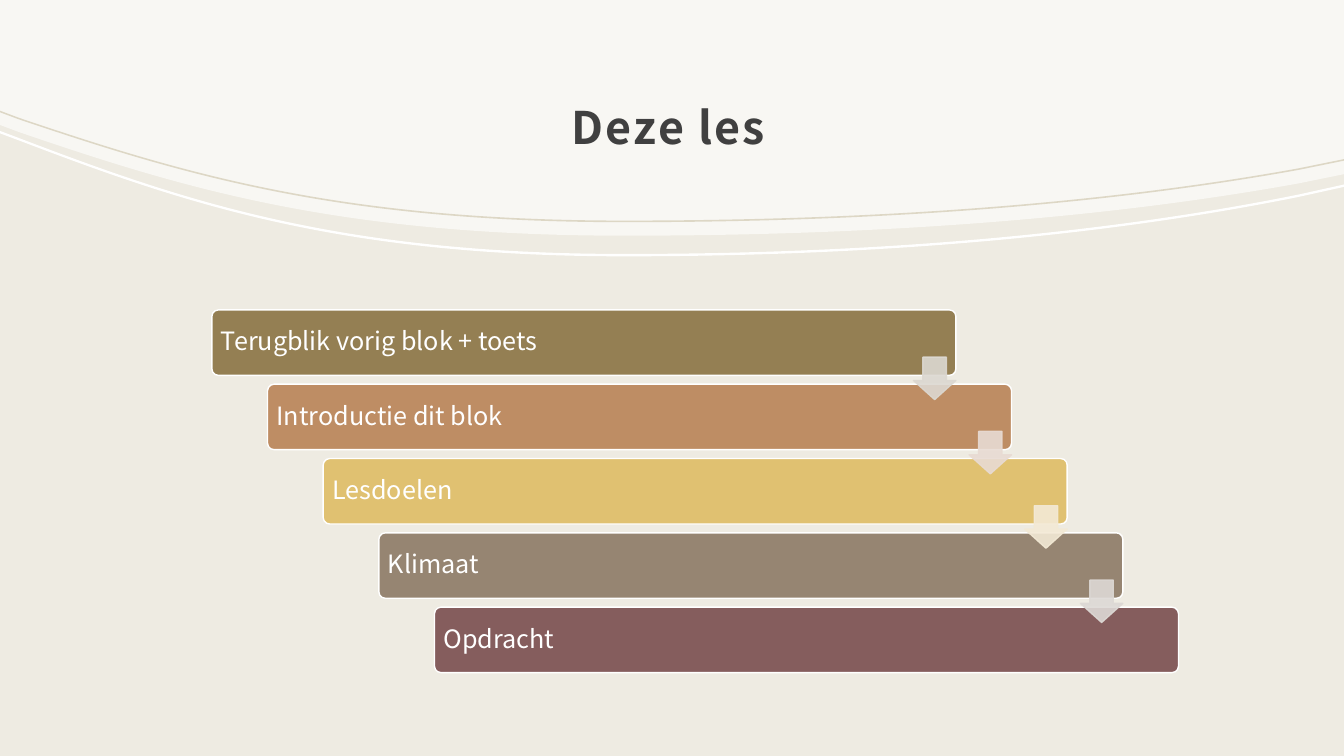
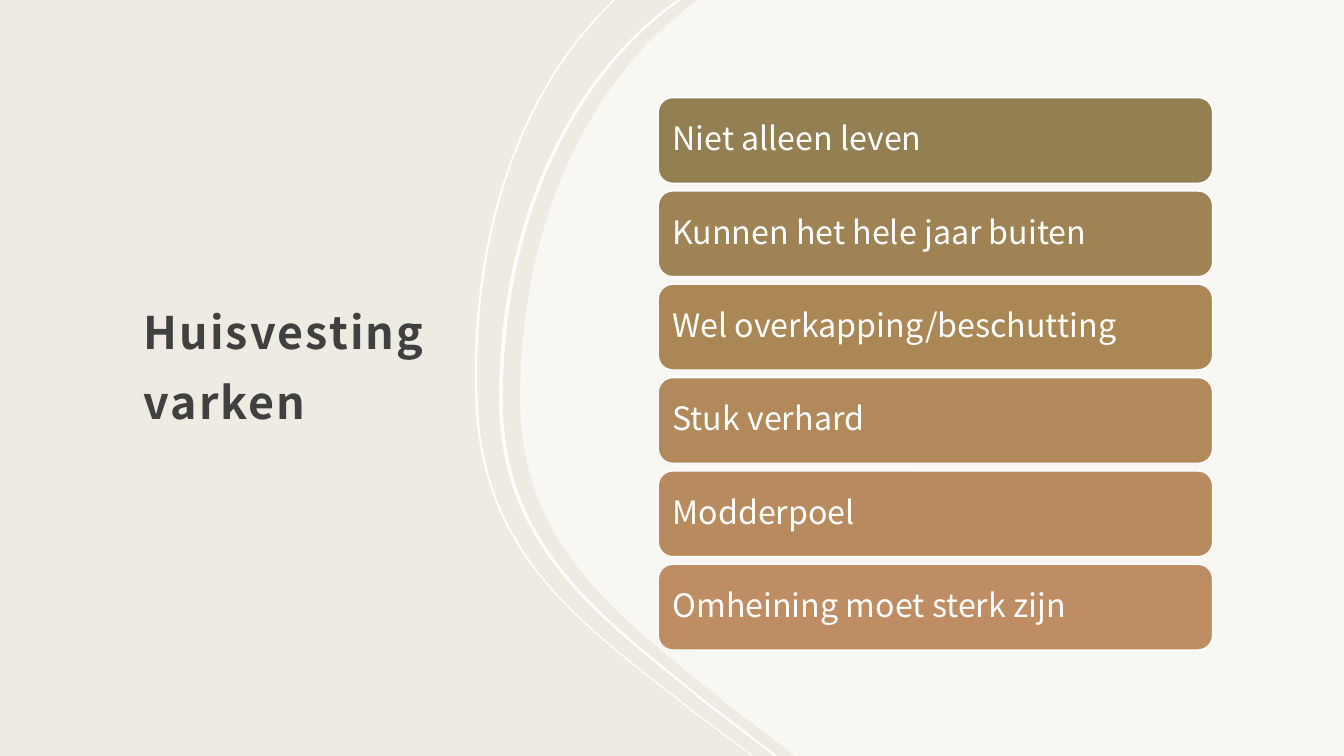
from collections import namedtuple

from lxml import etree
from pptx import Presentation
from pptx.dml.color import RGBColor
from pptx.enum.shapes import MSO_SHAPE as Shape
from pptx.enum.text import MSO_ANCHOR as Anchor, PP_ALIGN as Align
from pptx.oxml.ns import qn
from pptx.util import Cm, Pt

Box = namedtuple("Box", "left top width height")

FONT = "Noto Sans CJK JP"
SLIDE = Box(0, 0, 33.87, 19.05)
COLOURS = {
    "background": "EEEBE2", "white": "FFFFFF", "title": "404040", "hairline": "DDD7C5",
    "olive": "947F53", "copper": "BE8D64", "gold": "E0C171",
    "taupe": "968572", "plum": "855D5D",
    "bronze": "9F8354", "ochre": "AA8755", "tan": "B1895A", "caramel": "B88B5F",
    "arrow_olive": "DCD8D1", "arrow_copper": "E8DBD3",
    "arrow_gold": "F3E9D5", "arrow_taupe": "DDD9D5",
}

# Edges: an end point, a start, two cubic curves of three points each, an end point
WAVE_X = (0, 0.48, 4.55, 8.46, 15.75, 22.23, 27.94, 32.74, 33.87)
WAVE_AREA = (3.15, 3.33, 4.72, 5.94, 5.94, 5.94, 5.49, 4.62, 4.39)
WAVE_WHITE = (3.3, 3.48, 5.03, 6.4, 6.4, 6.4, 5.87, 4.9, 4.65)
WAVE_HAIRLINE = (2.79, 2.97, 4.34, 5.56, 5.56, 5.56, 5.11, 4.24, 4.01)
SIDE_AREA = ((17.6, 0), (17.55, 0.03), (14.71, 2.08), (13.11, 5.82), (13.11, 10.06),
             (13.11, 13.82), (15.67, 15.57), (18.31, 17.73), (20.04, 19.05))
SIDE_THIN = ((15.44, 0), (15.37, 0.08), (13, 2.39), (11.81, 6.1), (11.99, 10.21),
             (12.17, 14.1), (14.78, 15.82), (17.45, 17.93), (18.95, 19.05))
SIDE_GAP = 0.53


def rgb(name):
    return RGBColor.from_string(COLOURS[name])


def paint(shape, fill, line=None, opacity=100):
    """Set fill and line, and the opacity of both."""
    shape.shadow.inherit = False
    shape.fill.solid()
    shape.fill.fore_color.rgb = rgb(fill)
    if line:
        shape.line.color.rgb = rgb(line)
        shape.line.width = Pt(1)
    else:
        shape.line.fill.background()
    if opacity < 100:
        for colour in shape._element.spPr.iter(qn("a:srgbClr")):
            etree.SubElement(colour, qn("a:alpha"), val=str(opacity * 1000))


def write(shape, text, size, colour, bold=False, align=Align.LEFT, line_spacing=0.9,
          tracking=0, insets=(0.25, 0.25, 0.25, 0.25)):
    """Write one vertically centred paragraph in a shape."""
    frame = shape.text_frame
    frame.word_wrap = True
    frame.vertical_anchor = Anchor.MIDDLE
    (frame.margin_left, frame.margin_top,
     frame.margin_right, frame.margin_bottom) = [Cm(inset) for inset in insets]
    paragraph = frame.paragraphs[0]
    paragraph.alignment = align
    paragraph.line_spacing = line_spacing
    run = paragraph.add_run()
    run.text = text
    run.font.name = FONT
    run.font.size = Pt(size)
    run.font.bold = bold
    run.font.color.rgb = rgb(colour)
    if tracking:
        run.font._element.set("spc", str(int(tracking * 100)))


def add_shape(slide, kind, box, adjustments=(), **format):
    shape = slide.shapes.add_shape(kind, *[Cm(length) for length in box])
    for index, value in enumerate(adjustments):
        shape.adjustments[index] = value
    paint(shape, **format)
    return shape


def add_title(slide, box, text, align=Align.LEFT):
    title = slide.shapes.add_textbox(*[Cm(length) for length in box])
    write(title, text, 32, "title", bold=True, align=align, line_spacing=1.3,
          tracking=1.5, insets=(0.3, 0.3, 0.3, 0.25))


def add_outline(slide, box, points, curve_starts, **format):
    """Draw a closed outline; each curve start takes three points as one cubic curve."""
    vertices = [(Cm(box.left + x), Cm(box.top + y)) for x, y in points]
    builder = slide.shapes.build_freeform(*vertices[0])
    builder.add_line_segments(vertices[1:], close=True)
    shape = builder.convert_to_shape()
    outline = next(shape._element.spPr.iter(qn("a:path")))
    segments = list(outline)
    for start in curve_starts:
        curve = etree.Element(qn("a:cubicBezTo"))
        segments[start].addprevious(curve)
        for segment in segments[start:start + 3]:
            curve.append(segment[0])
            outline.remove(segment)
    paint(shape, **format)


def add_area(slide, box, edge, corners):
    add_outline(slide, box, list(edge) + corners, (2, 5), fill="white", opacity=60)


def add_ribbon(slide, box, edge, shift_x, shift_y, fill):
    """Fill the strip between an edge and the same edge shifted."""
    far_edge = [(x + shift_x, y + shift_y) for x, y in reversed(edge)]
    add_outline(slide, box, list(edge) + far_edge, (2, 5, 11, 14), fill=fill)


def add_wave_ribbon(slide, box, heights, thickness, fill):
    add_ribbon(slide, box, list(zip(WAVE_X, heights)), 0, thickness, fill)


def add_side(slide, box):
    """Pale area on the right with two ribbons."""
    add_area(slide, box, SIDE_AREA, [(box.width, box.height), (box.width, 0)])
    add_ribbon(slide, box, SIDE_THIN, 0.05, 0, "white")
    add_ribbon(slide, box, [(x - SIDE_GAP, y) for x, y in SIDE_AREA], 0.09, 0, "white")


def add_bars(slide, box, items, width, height, size, inset, rounding):
    """Spread labelled bars evenly from the top left to the bottom right of a box."""
    gaps = len(items) - 1
    step_x, step_y = (box.width - width) / gaps, (box.height - height) / gaps
    bars = []
    for index, (text, colour) in enumerate(items):
        bar = Box(box.left + index * step_x, box.top + index * step_y, width, height)
        shape = add_shape(slide, Shape.ROUNDED_RECTANGLE, bar, [rounding],
                          fill=colour, line="white")
        write(shape, text, size, "white", insets=(inset,) * 4)
        bars.append(bar)
    return bars


def add_staircase(slide, box, items, arrows):
    """Stepped bars, each with an arrow to the next one."""
    bars = add_bars(slide, box, items, 18.75, 1.65, 18, 0.18, 0.1)
    side = 1.07
    for bar, colour in zip(bars, arrows):
        arrow = Box(bar.left + bar.width - side, bar.top + 1.19, side, side)
        add_shape(slide, Shape.DOWN_ARROW, arrow, [0.55, 0.45],
                  fill=colour, line=colour, opacity=90)


def new_slide(presentation):
    slide = presentation.slides.add_slide(presentation.slide_layouts[6])
    slide.background.fill.solid()
    slide.background.fill.fore_color.rgb = rgb("background")
    return slide


def build_agenda(presentation):
    slide = new_slide(presentation)
    # Pale band along the top, title and two ribbons
    add_area(slide, SLIDE, zip(WAVE_X, WAVE_AREA), [(SLIDE.width, 0), (0, 0)])
    add_wave_ribbon(slide, SLIDE, WAVE_WHITE, 0.06, "white")
    add_title(slide, Box(3.3, 1.5, 27.1, 2.9), "Deze les", Align.CENTER)
    add_wave_ribbon(slide, SLIDE, WAVE_HAIRLINE, 0.04, "hairline")
    # Steps of the lesson
    add_staircase(
        slide, Box(5.34, 7.81, 24.36, 9.14),
        [("Terugblik vorig blok + toets", "olive"), ("Introductie dit blok", "copper"),
         ("Lesdoelen", "gold"), ("Klimaat", "taupe"), ("Opdracht", "plum")],
        ["arrow_olive", "arrow_copper", "arrow_gold", "arrow_taupe"])


def build_housing(presentation):
    slide = new_slide(presentation)
    add_title(slide, Box(3.32, 3.07, 8.38, 11.89), "Huisvesting varken")
    add_side(slide, SLIDE)
    # Housing needs
    add_bars(
        slide, Box(16.59, 2.46, 13.97, 13.92),
        [("Niet alleen leven", "olive"), ("Kunnen het hele jaar buiten", "bronze"),
         ("Wel overkapping/beschutting", "ochre"), ("Stuk verhard", "tan"),
         ("Modderpoel", "caramel"), ("Omheining moet sterk zijn", "copper")],
        width=13.97, height=2.16, size=23, inset=0.25, rounding=0.17)


def main():
    presentation = Presentation()
    presentation.slide_width = Cm(SLIDE.width)
    presentation.slide_height = Cm(SLIDE.height)
    build_agenda(presentation)
    build_housing(presentation)
    presentation.save("out.pptx")


if __name__ == "__main__":
    main()
